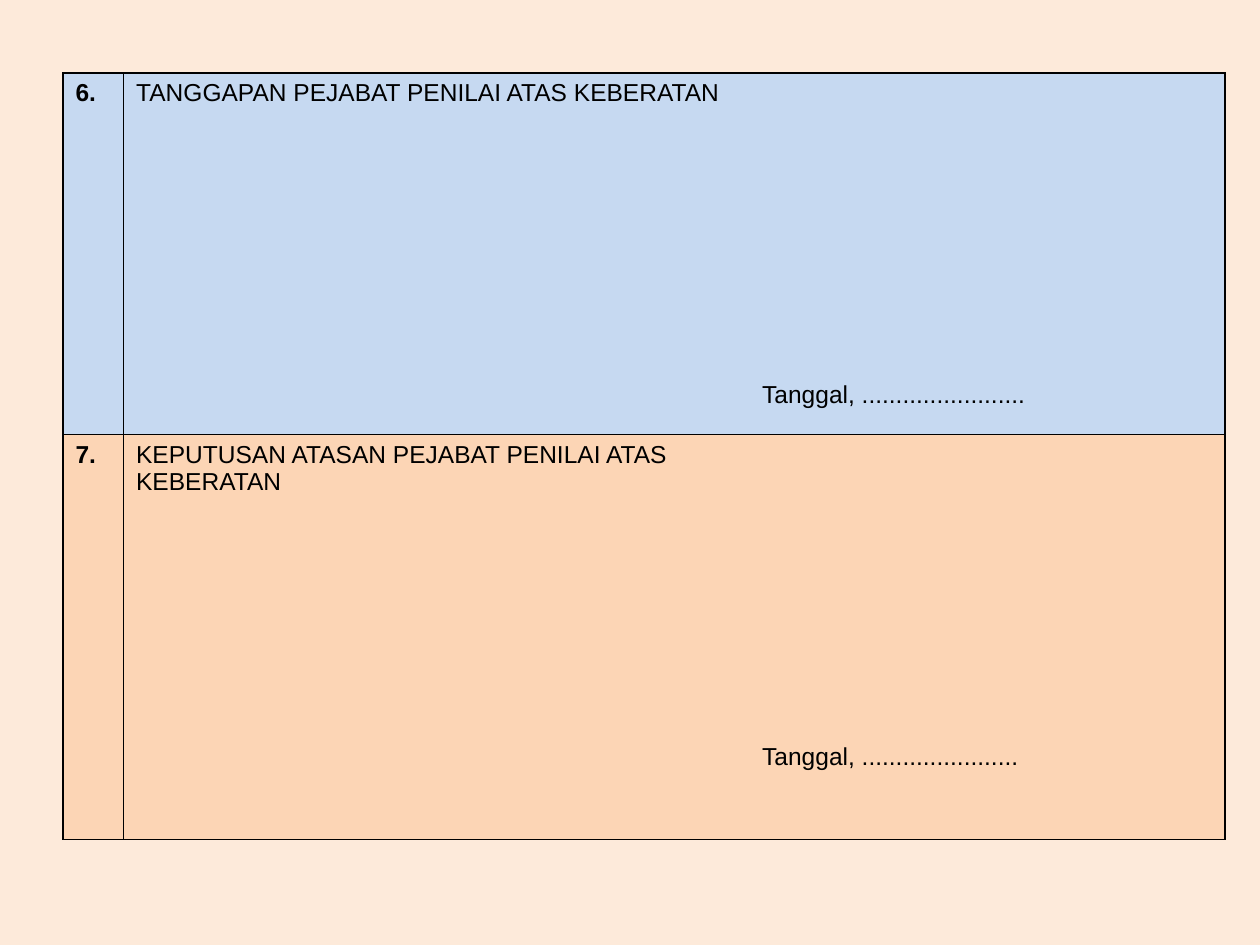
from lxml import etree
from pptx import Presentation
from pptx import util as u
from pptx.dml.color import RGBColor
from pptx.enum import text
from pptx.oxml.ns import qn

COLORS = {
    "background": "FDEADA",
    "response": "C6D9F1",
    "decision": "FCD5B5",
    "ink": "000000",
}


def write(cell, words, bold=False, align=text.PP_ALIGN.LEFT, top=0.13):
    """Write one line of text in a cell, `top` cm below its upper edge."""
    cell.margin_top = u.Cm(top)
    paragraph = cell.text_frame.paragraphs[0]
    paragraph.alignment = align
    run = paragraph.add_run()
    run.text = words
    run.font.name = "Arial"
    run.font.size = u.Pt(14)
    run.font.bold = bold
    run.font.color.rgb = RGBColor.from_string(COLORS["ink"])


class FormSlide:
    def __init__(self, prs):
        self.slide = prs.slides.add_slide(prs.slide_layouts[6])
        fill = self.slide.background.fill
        fill.solid()
        fill.fore_color.rgb = RGBColor.from_string(COLORS["background"])

    def table(self, left, top, widths, heights):
        frame = self.slide.shapes.add_table(
            len(heights), len(widths), u.Cm(left), u.Cm(top),
            u.Cm(sum(widths)), u.Cm(sum(heights)))
        form = frame.table
        form.first_row = form.horz_banding = False
        for column, width in zip(form.columns, widths):
            column.width = u.Cm(width)
        for row, height in zip(form.rows, heights):
            row.height = u.Cm(height)
        return form

    def style_cell(self, cell, color, sides):
        """Rule the named sides (L, R, T, B), clear the others, then fill."""
        props = cell._tc.get_or_add_tcPr()
        for side in "LRTB":
            line = etree.SubElement(props, qn(f"a:ln{side}"), w=str(u.Pt(1)))
            if side in sides:
                solid = etree.SubElement(line, qn("a:solidFill"))
                etree.SubElement(solid, qn("a:srgbClr"), val=COLORS["ink"])
            else:
                etree.SubElement(line, qn("a:noFill"))
        cell.fill.solid()
        cell.fill.fore_color.rgb = RGBColor.from_string(COLORS[color])


def main():
    prs = Presentation()
    prs.slide_width, prs.slide_height = u.Cm(25.4), u.Cm(19.05)
    page = FormSlide(prs)

    # Form sections: number, heading, date line, fill
    sections = [
        ("6.", "TANGGAPAN PEJABAT PENILAI ATAS KEBERATAN",
         "Tanggal, ........................", "response"),
        ("7.", "KEPUTUSAN ATASAN PEJABAT PENILAI ATAS KEBERATAN",
         "Tanggal, .......................", "decision"),
    ]
    form = page.table(1.27, 1.47, [1.22, 12.62, 9.58], [7.29, 8.16])

    for row, (number, heading, date, color) in enumerate(sections):
        number_cell, heading_cell, date_cell = form.rows[row].cells
        write(number_cell, number, bold=True, align=text.PP_ALIGN.JUSTIFY)
        write(heading_cell, heading)
        write(date_cell, date, top=6.22)

        # Heading and date share one box, with no rule between them
        for cell, sides in ((number_cell, "LRTB"), (heading_cell, "LTB"),
                            (date_cell, "RTB")):
            page.style_cell(cell, color, sides)

    prs.save("out.pptx")


if __name__ == "__main__":
    main()
